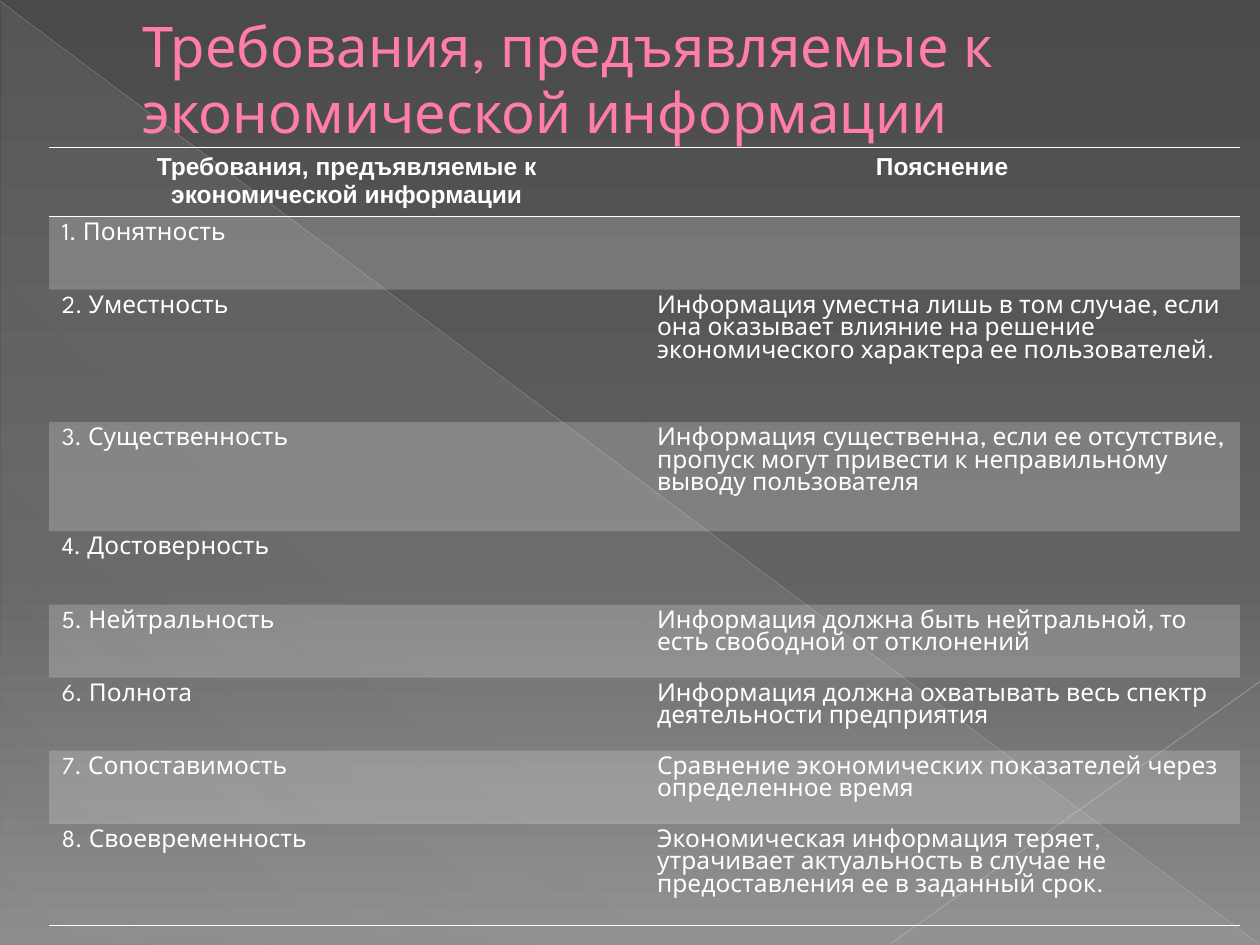
from dataclasses import dataclass

from lxml.etree import SubElement
from pptx import Presentation
from pptx.dml.color import RGBColor
from pptx.enum.shapes import MSO_CONNECTOR, MSO_SHAPE
from pptx.enum.text import MSO_ANCHOR, PP_ALIGN
from pptx.oxml.ns import qn
from pptx.util import Pt

COLORS = {
    "top": "4A4A4A",
    "middle": "626262",
    "bottom": "8C8C8C",
    "wedge": "D2D2D2",
    "diagonal": "BFBFBF",
    "corner": "C6C6C6",
    "title": "FF7DA7",
    "white": "FFFFFF",
}
BODY_FONT = "League Spartan"
HEADER_FONT = "Arial"
TITLE_TEXT = "Требования, предъявляемые к экономической информации"


@dataclass
class Stop:
    position: int
    color: str
    alpha: int = 100


@dataclass
class Ray:
    start: tuple[float, float]
    end: tuple[float, float]
    color: str
    width: float
    alpha: int


@dataclass
class Requirement:
    name: str
    explanation: str
    height: float = 41.76


RAYS = [
    Ray((0, 0.7), (719.3, 539.3), "diagonal", 0.39, 35),
    Ray((720, 389.5), (509, 539.3), "corner", 0.47, 45),
]
ROWS = [
    Requirement(TITLE_TEXT, "Пояснение", 39.6),
    Requirement("1. Понятность", ""),
    Requirement("2. Уместность", "Информация уместна лишь в том случае, если она оказывает "
                "влияние на решение экономического характера ее пользователей.", 75.6),
    Requirement("3. Существенность", "Информация существенна, если ее отсутствие, "
                "пропуск могут привести к неправильному выводу пользователя", 62.6),
    Requirement("4. Достоверность", ""),
    Requirement("5. Нейтральность", "Информация должна быть нейтральной, "
                "то есть свободной от отклонений"),
    Requirement("6. Полнота", "Информация должна охватывать весь спектр "
                "деятельности предприятия"),
    Requirement("7. Сопоставимость", "Сравнение экономических показателей "
                "через определенное время"),
    Requirement("8. Своевременность", "Экономическая информация теряет, утрачивает "
                "актуальность в случае не предоставления ее в заданный срок.", 58.3),
]


def rgb(name: str) -> RGBColor:
    return RGBColor.from_string(COLORS[name])


def add_color(parent, name: str, alpha: int = 100) -> None:
    color = SubElement(parent, qn("a:srgbClr"), val=COLORS[name])
    if alpha < 100:
        SubElement(color, qn("a:alpha"), val=str(alpha * 1000))


def set_alpha(element, alpha: int) -> None:
    color = element.find(".//" + qn("a:srgbClr"))
    SubElement(color, qn("a:alpha"), val=str(alpha * 1000))


def paint_gradient(fill, element, stops: list[Stop], angle: int) -> None:
    fill.gradient()
    stop_list = element.find(".//" + qn("a:gsLst"))
    for old_stop in list(stop_list):
        stop_list.remove(old_stop)
    for stop in stops:
        entry = SubElement(stop_list, qn("a:gs"), pos=str(stop.position * 1000))
        add_color(entry, stop.color, stop.alpha)
    element.find(".//" + qn("a:lin")).set("ang", str(angle * 60000))


def add_span(para, text: str, font: str, size: float, color: str, bold: bool = False) -> None:
    span = para.add_run()
    span.text = text
    span.font.name = font
    span.font.size = Pt(size)
    span.font.bold = bold
    span.font.color.rgb = rgb(color)


def add_wedge(page) -> None:
    wedge = page.shapes.add_shape(
        MSO_SHAPE.RIGHT_TRIANGLE, Pt(0.7), Pt(1.4), Pt(719.3), Pt(538.6))
    wedge.shadow.inherit = False
    wedge.line.fill.background()
    stops = [Stop(0, "wedge", 10), Stop(70, "wedge", 8), Stop(100, "wedge", 1)]
    paint_gradient(wedge.fill, wedge._element.spPr, stops, 133)


def add_ray(page, ray: Ray) -> None:
    points = [Pt(value) for value in (*ray.start, *ray.end)]
    line = page.shapes.add_connector(MSO_CONNECTOR.STRAIGHT, *points)
    line.line.color.rgb = rgb(ray.color)
    line.line.width = Pt(ray.width)
    properties = line._element.spPr
    set_alpha(properties, ray.alpha)
    SubElement(properties, qn("a:effectLst"))


def place_title(page) -> None:
    title = page.shapes.title
    title.left, title.top, title.width, title.height = Pt(36), Pt(20.9), Pt(648), Pt(85.7)
    page.shapes._spTree.append(title._element)
    frame = title.text_frame
    frame.word_wrap = True
    frame.vertical_anchor = MSO_ANCHOR.MIDDLE
    frame.margin_left = Pt(45.4)
    frame.margin_bottom = Pt(41.3)
    para = frame.paragraphs[0]
    para.alignment = PP_ALIGN.LEFT
    para.line_spacing = Pt(37.7)
    add_span(para, TITLE_TEXT, BODY_FONT, 32, "title")


def add_border(cell, sides: list[str]) -> None:
    properties = cell._tc.get_or_add_tcPr()
    for side in sides:
        border = SubElement(properties, qn(f"a:{side}"), w=str(Pt(1)))
        add_color(SubElement(border, qn("a:solidFill")), "white")


def fill_cell(cell, text: str, row: int) -> None:
    header = row == 0
    if header:
        add_border(cell, ["lnT", "lnB"])
    elif row == len(ROWS) - 1:
        add_border(cell, ["lnB"])
    if row % 2:
        cell.fill.solid()
        cell.fill.fore_color.rgb = rgb("white")
        set_alpha(cell._tc.tcPr, 20)
    else:
        cell.fill.background()
    if text:
        para = cell.text_frame.paragraphs[0]
        para.alignment = PP_ALIGN.CENTER if header else PP_ALIGN.LEFT
        add_span(para, text, HEADER_FONT if header else BODY_FONT, 14, "white", header)


def add_requirements(page) -> None:
    height = sum(row.height for row in ROWS)
    frame = page.shapes.add_table(len(ROWS), 2, Pt(28.1), Pt(84.2), Pt(680.4), Pt(height))
    table = frame.table
    table.first_row = table.horz_banding = False
    style = frame._element.find(".//" + qn("a:tableStyleId"))
    style.text = "{2D5ABB26-0587-4C30-8999-92F81FD0307C}"
    for index, row in enumerate(ROWS):
        table.rows[index].height = Pt(row.height)
        for column, text in enumerate((row.name, row.explanation)):
            fill_cell(table.cell(index, column), text, index)


def main() -> None:
    deck = Presentation()
    deck.slide_width, deck.slide_height = Pt(720), Pt(540)
    page = deck.slides.add_slide(deck.slide_layouts[5])
    stops = [Stop(0, "top"), Stop(60, "middle"), Stop(100, "bottom")]
    paint_gradient(page.background.fill, page._element, stops, 90)
    add_wedge(page)
    for ray in RAYS:
        add_ray(page, ray)
    place_title(page)
    add_requirements(page)
    deck.save("out.pptx")


if __name__ == "__main__":
    main()
